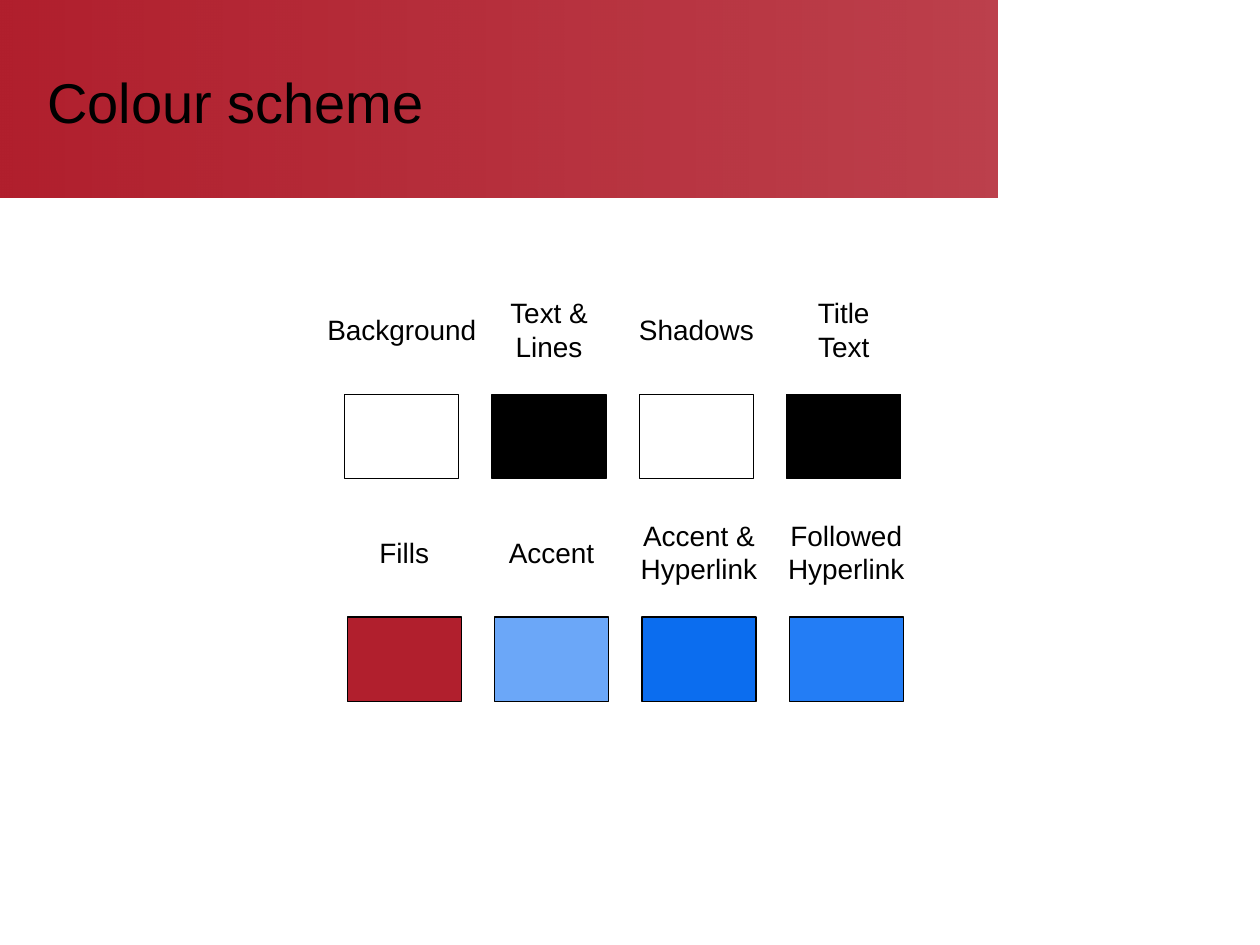
from dataclasses import dataclass

from lxml import etree
from pptx import Presentation
from pptx.dml.color import RGBColor
from pptx.enum.shapes import MSO_SHAPE
from pptx.enum.text import MSO_ANCHOR, MSO_AUTO_SIZE, PP_ALIGN
from pptx.oxml.ns import qn
from pptx.slide import Slide
from pptx.util import Cm, Pt

RECTANGLE = MSO_SHAPE.RECTANGLE
MIDDLE = MSO_ANCHOR.MIDDLE
FIT_SHAPE = MSO_AUTO_SIZE.SHAPE_TO_FIT_TEXT
CENTER = PP_ALIGN.CENTER

BLACK = RGBColor(0x00, 0x00, 0x00)
WHITE = RGBColor(0xFF, 0xFF, 0xFF)
RED = RGBColor(0xB1, 0x1F, 0x2D)
LIGHT_BLUE = RGBColor(0x6B, 0xA7, 0xF8)
LINK_BLUE = RGBColor(0x0B, 0x6D, 0xEF)
FOLLOWED_BLUE = RGBColor(0x23, 0x7D, 0xF5)

FONT = "Arial"
PITCH = Cm(2.97)
SWATCH_WIDTH = Cm(2.3)
SWATCH_HEIGHT = Cm(1.7)
LABEL_RISE = Cm(1.3)
LABEL_HEIGHTS = {1: Cm(0.94), 2: Cm(1.63)}


@dataclass(frozen=True)
class Swatch:
    label: str
    label_width: float
    color: RGBColor


@dataclass(frozen=True)
class SwatchRow:
    left: float
    top: float
    swatches: tuple[Swatch, ...]


ROWS = (
    SwatchRow(6.95, 7.95, (
        Swatch("Background", 3.55, WHITE),
        Swatch("Text &\nLines", 2.15, BLACK),
        Swatch("Shadows", 2.85, WHITE),
        Swatch("Title\vText", 1.65, BLACK),
    )),
    SwatchRow(7, 12.44, (
        Swatch("Fills", 1.55, RED),
        Swatch("Accent", 2.28, LIGHT_BLUE),
        Swatch("Accent &\nHyperlink", 2.9, LINK_BLUE),
        Swatch("Followed\nHyperlink", 2.9, FOLLOWED_BLUE),
    )),
)


def draw_banner(page: Slide) -> None:
    banner = page.shapes.add_shape(RECTANGLE, 0, 0, Cm(20.1), Cm(3.99))
    banner.shadow.inherit = False
    banner.line.fill.background()
    banner.fill.gradient()
    banner.fill.gradient_angle = 0
    for stop in banner.fill.gradient_stops:
        stop.color.rgb = RED
    end_color = list(banner.element.iter(qn("a:srgbClr")))[-1]
    etree.SubElement(end_color, qn("a:alpha"), val="85000")


def draw_title(page: Slide, title: str) -> None:
    box = page.shapes.add_textbox(Cm(0.7), Cm(0.76), Cm(19), Cm(2.57))
    frame = box.text_frame
    frame.word_wrap = True
    frame.vertical_anchor = MIDDLE
    frame.text = title
    font = frame.paragraphs[0].font
    font.name, font.size, font.color.rgb = FONT, Pt(32), BLACK


def draw_label(page: Slide, swatch: Swatch, center_x: int, center_y: int) -> None:
    width = Cm(swatch.label_width)
    height = LABEL_HEIGHTS[len(swatch.label.splitlines())]
    box = page.shapes.add_textbox(
        center_x - width // 2, center_y - height // 2, width, height)
    frame = box.text_frame
    frame.word_wrap = False
    frame.auto_size = FIT_SHAPE
    frame.text = swatch.label
    for para in frame.paragraphs:
        para.alignment = CENTER
        font = para.font
        font.name, font.size, font.color.rgb = FONT, Pt(16), BLACK


def draw_swatch(page: Slide, swatch: Swatch, left: int, top: int) -> None:
    tile = page.shapes.add_shape(RECTANGLE, left, top, SWATCH_WIDTH, SWATCH_HEIGHT)
    tile.shadow.inherit = False
    tile.fill.solid()
    tile.fill.fore_color.rgb = swatch.color
    tile.line.color.rgb = BLACK
    tile.line.width = Pt(0.75)
    draw_label(page, swatch, left + SWATCH_WIDTH // 2, top - LABEL_RISE)


def main() -> None:
    deck = Presentation()
    deck.slide_width, deck.slide_height = Cm(25.4), Cm(19.05)
    page = deck.slides.add_slide(deck.slide_layouts[6])
    draw_banner(page)
    draw_title(page, "Colour scheme")
    for row in ROWS:
        for column, swatch in enumerate(row.swatches):
            draw_swatch(page, swatch, Cm(row.left) + column * PITCH, Cm(row.top))
    deck.save("out.pptx")


if __name__ == "__main__":
    main()
